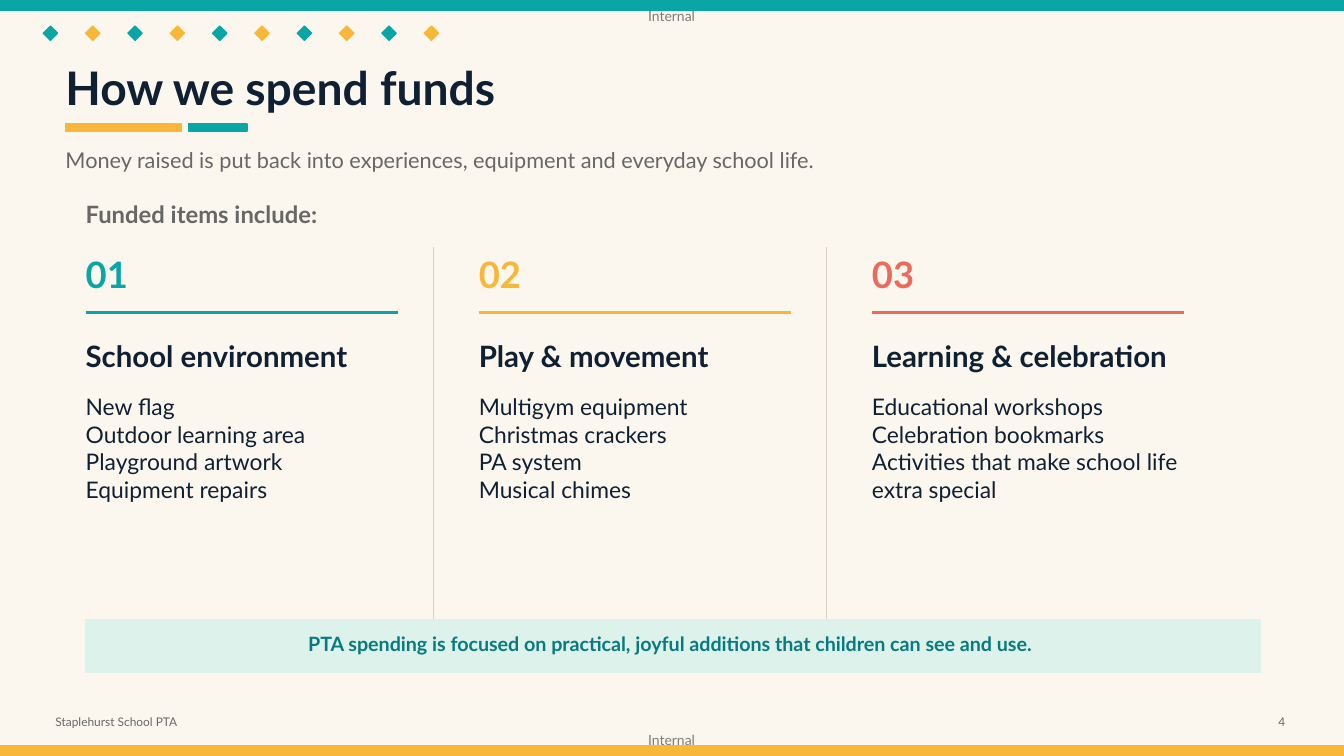
import dataclasses

import lxml.etree
import pptx
import pptx.dml.color
import pptx.enum.shapes
import pptx.enum.text
import pptx.oxml.ns
import pptx.util

Pt = pptx.util.Pt
RGBColor = pptx.dml.color.RGBColor
Align = pptx.enum.text.PP_ALIGN
Anchor = pptx.enum.text.MSO_ANCHOR

CREAM = RGBColor(0xFB, 0xF7, 0xEE)
TEAL = RGBColor(0x0A, 0xA6, 0xA6)
GOLD = RGBColor(0xF8, 0xB7, 0x39)
CORAL = RGBColor(0xEC, 0x6A, 0x5A)
NAVY = RGBColor(0x10, 0x20, 0x33)
GREY = RGBColor(0x67, 0x67, 0x67)
FAINT = RGBColor(0x7E, 0x7C, 0x77)
SAND = RGBColor(0xD8, 0xD0, 0xC4)
MINT = RGBColor(0xDD, 0xF2, 0xEB)
PINE = RGBColor(0x08, 0x7B, 0x7E)

FONT = "Lato"
WIDTH, HEIGHT = 960, 540
BAR = 7.2
EDGE = 46.8
LEFT, STEP = 61.2, 280.8


@dataclasses.dataclass
class Box:
    left: float
    top: float
    width: float
    height: float

    def points(self) -> list[pptx.util.Length]:
        return [Pt(n) for n in (self.left, self.top, self.width, self.height)]


@dataclasses.dataclass
class Column:
    color: RGBColor
    title: str
    items: list[str]


COLUMNS = [
    Column(TEAL, "School environment",
           ["New flag", "Outdoor learning area", "Playground artwork", "Equipment repairs"]),
    Column(GOLD, "Play & movement",
           ["Multigym equipment", "Christmas crackers", "PA system", "Musical chimes"]),
    Column(CORAL, "Learning & celebration",
           ["Educational workshops", "Celebration bookmarks",
            "Activities that make school life extra special"]),
]


def add_text(slide, box: Box, *lines: str, size: float, color: RGBColor, bold: bool = False,
             align=Align.LEFT, anchor=Anchor.MIDDLE, spacing: float = 1.0) -> None:
    frame = slide.shapes.add_textbox(*box.points()).text_frame
    frame.word_wrap = True
    frame.vertical_anchor = anchor
    frame.margin_left = frame.margin_right = frame.margin_top = frame.margin_bottom = 0
    frame.text = "\n".join(lines)
    for para in frame.paragraphs:
        para.alignment = align
        para.line_spacing = spacing
        para.font.name = FONT
        para.font.size = Pt(size)
        para.font.bold = bold
        para.font.color.rgb = color


def add_rect(slide, box: Box, color: RGBColor, turn: float = 0) -> None:
    kind = pptx.enum.shapes.MSO_SHAPE.RECTANGLE
    shape = slide.shapes.add_shape(kind, *box.points())
    shape.shadow.inherit = False
    shape.rotation = turn
    shape.fill.solid()
    shape.fill.fore_color.rgb = color
    shape.line.color.rgb = color
    shape.line.width = Pt(1)


def add_line(slide, box: Box, color: RGBColor, weight: float) -> None:
    left, top, width, height = box.points()
    kind = pptx.enum.shapes.MSO_CONNECTOR.STRAIGHT
    line = slide.shapes.add_connector(kind, left, top, left + width, top + height)
    line.line.color.rgb = color
    line.line.width = Pt(weight)
    lxml.etree.SubElement(line._element.spPr, pptx.oxml.ns.qn("a:effectLst"))


def add_frame(slide) -> None:
    for top in (5.04, 522.72):
        add_text(slide, Box(462.96, top, 35.28, 12.24), "Internal",
                 size=10, color=FAINT, anchor=Anchor.TOP)
    add_rect(slide, Box(0, 0, WIDTH, BAR), TEAL)
    add_rect(slide, Box(0, HEIGHT - BAR, WIDTH, BAR), GOLD)
    for i in range(10):
        add_rect(slide, Box(32.4 + 30.24 * i, 20.16, 7.2, 7.2), (TEAL, GOLD)[i % 2], turn=45)
    add_text(slide, Box(39.6, 507.6, 237.6, 15.84), "Staplehurst School PTA",
             size=8.5, color=GREY)
    add_text(slide, Box(889.2, 507.6, 28.8, 15.84), "4",
             size=8.5, color=GREY, align=Align.RIGHT)


def add_head(slide) -> None:
    add_text(slide, Box(EDGE, 39.6, 626.4, 44.64), "How we spend funds",
             size=33, color=NAVY, bold=True)
    add_rect(slide, Box(EDGE, 88.56, 82.8, 5.04), GOLD)
    add_rect(slide, Box(134.64, 88.56, 41.76, 5.04), TEAL)
    add_text(slide, Box(EDGE, 99.36, 684, 30.24),
             "Money raised is put back into experiences, equipment and everyday school life.",
             size=15.5, color=GREY)
    add_text(slide, Box(LEFT, 140.4, 302.4, 25.2), "Funded items include:",
             size=17, color=GREY, bold=True)


def add_column(slide, i: int, col: Column) -> None:
    left = LEFT + STEP * i
    if i:
        add_line(slide, Box(left - 32.4, 176.4, 0, 270), SAND, 1)
    add_text(slide, Box(left, 178.56, 66.24, 34.56), f"{i + 1:02}",
             size=26, color=col.color, bold=True)
    add_line(slide, Box(left, 223.2, 223.2, 0), col.color, 2.2)
    add_text(slide, Box(left, 240.48, 230.4, 27.36), col.title,
             size=21, color=NAVY, bold=True)
    add_text(slide, Box(left, 280.8, 219.6, 111.6), *col.items,
             size=16.3, color=NAVY, anchor=Anchor.TOP)


def main() -> None:
    deck = pptx.Presentation()
    deck.slide_width, deck.slide_height = Pt(WIDTH), Pt(HEIGHT)
    slide = deck.slides.add_slide(deck.slide_layouts[6])
    slide.background.fill.solid()
    slide.background.fill.fore_color.rgb = CREAM
    add_frame(slide)
    add_head(slide)
    for i, col in enumerate(COLUMNS):
        add_column(slide, i, col)
    add_rect(slide, Box(LEFT, 442.8, 838.8, 37.44), MINT)
    add_text(slide, Box(75.6, 452.88, 806.4, 15.84),
             "PTA spending is focused on practical, joyful additions that children can see and use.",
             size=14.1, color=PINE, bold=True, align=Align.CENTER, spacing=0.9)
    deck.save("out.pptx")


if __name__ == "__main__":
    main()
